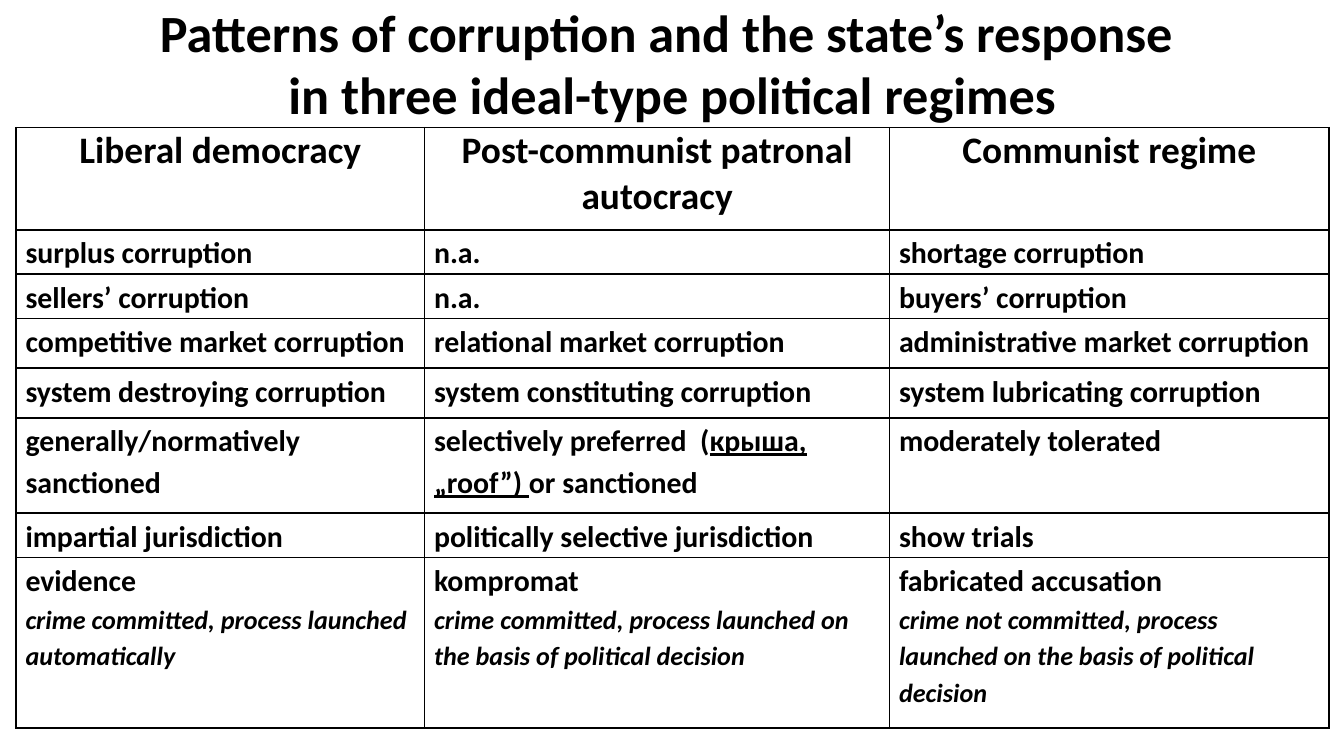
from lxml.etree import SubElement as Sub
from pptx import Presentation
from pptx.dml.color import RGBColor
from pptx.enum.text import MSO_ANCHOR as Anchor, PP_ALIGN as Align
from pptx.oxml.ns import qn
from pptx.util import Inches, Pt

BLACK = RGBColor(0, 0, 0)

TITLE = "Patterns of corruption and the state’s response \vin three ideal-type political regimes"
HEADS = ["Liberal democracy", "Post-communist patronal autocracy", "Communist regime"]
ROWS = [
    ["surplus corruption", "n.a.", "shortage corruption"],
    ["sellers’ corruption", "n.a.", "buyers’ corruption"],
    ["competitive market corruption", "relational market corruption", "administrative market corruption"],
    ["system destroying corruption", "system constituting corruption", "system lubricating corruption"],
    ["generally/normatively sanctioned", "selectively preferred  (|крыша, „roof”) |or sanctioned", "moderately tolerated"],
    ["impartial jurisdiction", "politically selective jurisdiction", "show trials"],
    [
        "evidence\ncrime committed, process launched automatically",
        "kompromat\ncrime committed, process launched on the basis of political decision",
        "fabricated accusation\ncrime not committed, process launched on the basis of political decision",
    ],
]
WIDTHS = [3.04, 3.46, 3.27]
HEIGHTS = [0.76, 0.33, 0.33, 0.37, 0.37, 0.71, 0.33, 1.27]


class Deck:
    face = "Calibri"
    color = BLACK
    line = Pt(1)

    def __init__(self, wide, high):
        self.show = Presentation()
        self.show.slide_width = Inches(wide)
        self.show.slide_height = Inches(high)
        self.slide = self.show.slides.add_slide(self.show.slide_layouts[5])

    def style(self, para, size, slant=False):
        font = para.font
        font.name = self.face
        font.size = Pt(size)
        font.bold = True
        font.italic = slant
        font.color.rgb = self.color

    def title(self, text, left, top, wide, high):
        shape = self.slide.shapes.title
        shape.left, shape.top = Inches(left), Inches(top)
        shape.width, shape.height = Inches(wide), Inches(high)
        frame = shape.text_frame
        frame.vertical_anchor = Anchor.MIDDLE
        frame.text = text
        para = frame.paragraphs[0]
        para.alignment = Align.CENTER
        self.style(para, 28)

    def border(self, cell):
        props = cell._tc.get_or_add_tcPr()
        for side in ("a:lnL", "a:lnR", "a:lnT", "a:lnB"):
            edge = Sub(props, qn(side), w=str(self.line))
            fill = Sub(edge, qn("a:solidFill"))
            Sub(fill, qn("a:srgbClr"), val=str(self.color))

    def cell(self, cell, text, head):
        cell.margin_left = cell.margin_right = Inches(0.07)
        cell.margin_top = cell.margin_bottom = 0
        self.border(cell)
        cell.fill.background()
        frame = cell.text_frame
        for i, part in enumerate(text.split("\n")):
            para = frame.add_paragraph() if i else frame.paragraphs[0]
            if head:
                para.alignment = Align.CENTER
                self.style(para, 20)
            else:
                para.line_spacing = 1.15
                self.style(para, 14 if i else 16, bool(i))
            for j, piece in enumerate(part.split("|")):
                run = para.add_run()
                run.text = piece
                if j % 2:
                    run.font.underline = True

    def table(self, rows, left, top, widths, heights):
        frame = self.slide.shapes.add_table(
            len(rows), len(widths), Inches(left), Inches(top),
            Inches(sum(widths)), Inches(sum(heights)))
        grid = frame.table
        grid.first_row = grid.horz_banding = False
        for col, wide in zip(grid.columns, widths):
            col.width = Inches(wide)
        for r, (row, high) in enumerate(zip(rows, heights)):
            grid.rows[r].height = Inches(high)
            for c, text in enumerate(row):
                self.cell(grid.cell(r, c), text, r == 0)


def main():
    deck = Deck(10, 10 * 9 / 16)
    deck.title(TITLE, 0.5, 0.08, 9, 0.77)
    deck.table([HEADS] + ROWS, 0.12, 0.95, WIDTHS, HEIGHTS)
    deck.show.save("out.pptx")


if __name__ == "__main__":
    main()
